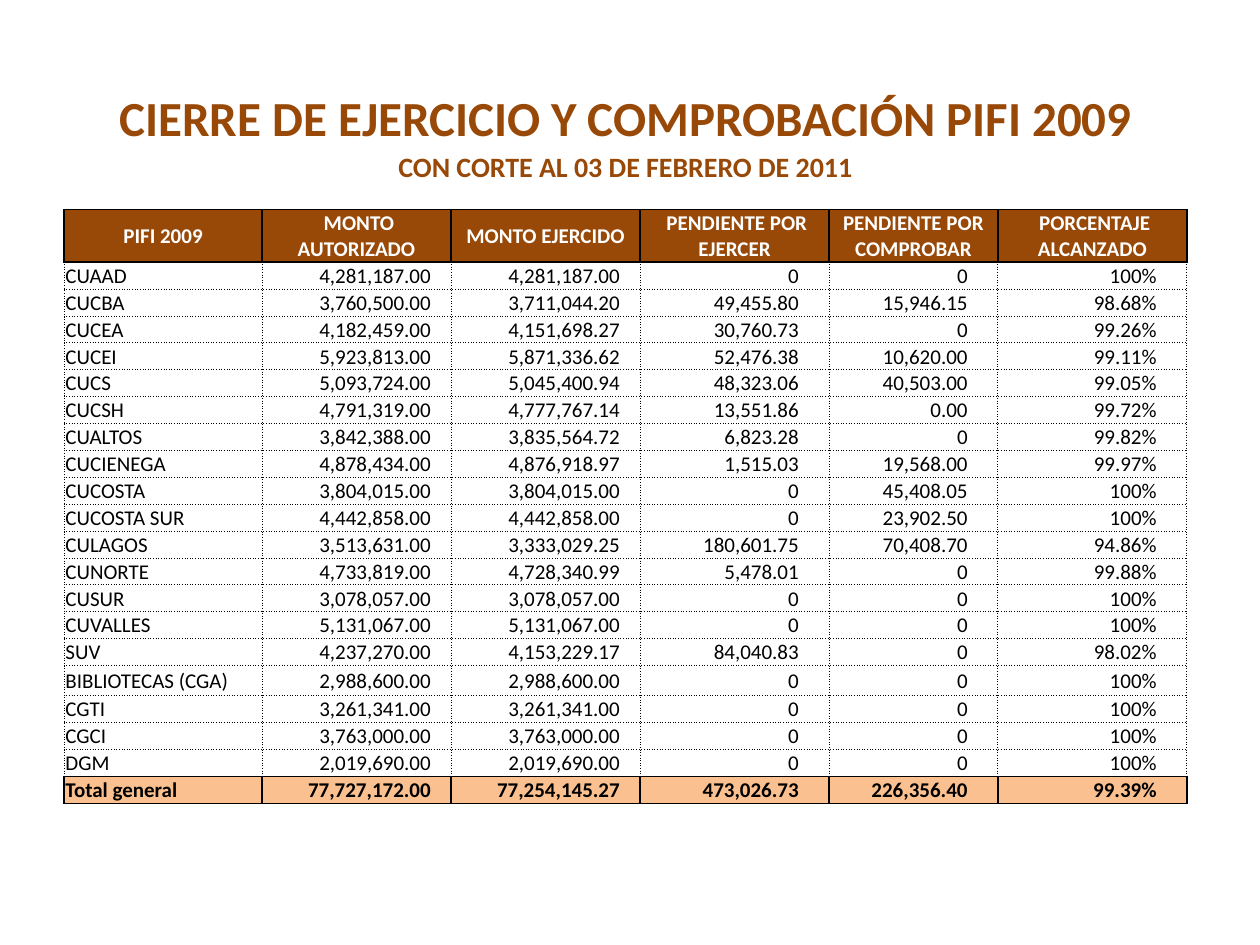
import pptx
import pptx.util
import pptx.dml.color
import pptx.enum.text
import pptx.oxml.ns
from lxml import etree

Inches = pptx.util.Inches
RGB = pptx.dml.color.RGBColor
ALIGN = pptx.enum.text.PP_ALIGN
ANCHOR = pptx.enum.text.MSO_ANCHOR

BROWN = RGB(0x98, 0x48, 0x07)
PEACH = RGB(0xFA, 0xC0, 0x90)
BLACK = RGB(0, 0, 0)
WHITE = RGB(0xFF, 0xFF, 0xFF)

TITLES = [("CIERRE DE EJERCICIO Y COMPROBACIÓN PIFI 2009", 28),
          ("CON CORTE AL 03 DE FEBRERO DE 2011", 16)]
HEADS = ["PIFI 2009", " MONTO AUTORIZADO", "MONTO EJERCIDO",
         " PENDIENTE POR EJERCER", "PENDIENTE POR COMPROBAR",
         " PORCENTAJE ALCANZADO"]
BODY = [
    ["CUAAD", "4,281,187.00", "4,281,187.00", "0", "0", "100%"],
    ["CUCBA", "3,760,500.00", "3,711,044.20", "49,455.80", "15,946.15", "98.68%"],
    ["CUCEA", "4,182,459.00", "4,151,698.27", "30,760.73", "0", "99.26%"],
    ["CUCEI", "5,923,813.00", "5,871,336.62", "52,476.38", "10,620.00", "99.11%"],
    ["CUCS", "5,093,724.00", "5,045,400.94", "48,323.06", "40,503.00", "99.05%"],
    ["CUCSH", "4,791,319.00", "4,777,767.14", "13,551.86", "0.00", "99.72%"],
    ["CUALTOS", "3,842,388.00", "3,835,564.72", "6,823.28", "0", "99.82%"],
    ["CUCIENEGA", "4,878,434.00", "4,876,918.97", "1,515.03", "19,568.00", "99.97%"],
    ["CUCOSTA", "3,804,015.00", "3,804,015.00", "0", "45,408.05", "100%"],
    ["CUCOSTA SUR", "4,442,858.00", "4,442,858.00", "0", "23,902.50", "100%"],
    ["CULAGOS", "3,513,631.00", "3,333,029.25", "180,601.75", "70,408.70", "94.86%"],
    ["CUNORTE", "4,733,819.00", "4,728,340.99", "5,478.01", "0", "99.88%"],
    ["CUSUR", "3,078,057.00", "3,078,057.00", "0", "0", "100%"],
    ["CUVALLES", "5,131,067.00", "5,131,067.00", "0", "0", "100%"],
    ["SUV", "4,237,270.00", "4,153,229.17", "84,040.83", "0", "98.02%"],
    ["BIBLIOTECAS (CGA)", "2,988,600.00", "2,988,600.00", "0", "0", "100%"],
    ["CGTI", "3,261,341.00", "3,261,341.00", "0", "0", "100%"],
    ["CGCI", "3,763,000.00", "3,763,000.00", "0", "0", "100%"],
    ["DGM", "2,019,690.00", "2,019,690.00", "0", "0", "100%"],
]
TOTAL = ["Total general", "77,727,172.00", "77,254,145.27",
         "473,026.73", "226,356.40", "99.39%"]
WIDTHS = [1.57, 1.5, 1.5, 1.5, 1.34, 1.5]
PADS = [0.01, 0.16, 0.16, 0.24, 0.24, 0.24]
SOLID = (1, "solid")
DOTS = (0.5, "sysDot")


def write(frame, text, size=12, color=BLACK, bold=False, align=ALIGN.LEFT,
          font="Calibri"):
    para = frame.paragraphs[0]
    para.alignment = align
    if not text:
        # An empty cell still takes its height from the end mark
        end = etree.SubElement(para._p, pptx.oxml.ns.qn("a:endParaRPr"))
        end.set("sz", str(size * 100))
        return
    run = para.add_run()
    run.text = text
    run.font.name = font
    run.font.size = pptx.util.Pt(size)
    run.font.bold = bold
    run.font.color.rgb = color


class Deck:
    def __init__(self):
        self.prs = pptx.Presentation()
        self.prs.slide_width = Inches(10)
        self.prs.slide_height = Inches(7.5)
        self.slide = self.prs.slides.add_slide(self.prs.slide_layouts[6])

    def table(self, left, top, widths, heights):
        shape = self.slide.shapes.add_table(
            len(heights), len(widths), Inches(left), Inches(top),
            Inches(sum(widths)), Inches(sum(heights)))
        grid = shape.table
        grid.first_row = grid.horz_banding = False
        for col, width in zip(grid.columns, widths):
            col.width = Inches(width)
        for row, height in zip(grid.rows, heights):
            row.height = Inches(height)
        return grid

    def cell(self, cell, text, pads=(0.01, 0.01), anchor=ANCHOR.MIDDLE,
             fill=None, edges=None, **style):
        cell.margin_left, cell.margin_right = map(Inches, pads)
        cell.margin_top, cell.margin_bottom = Inches(0.01), 0
        cell.vertical_anchor = anchor
        self.border(cell, edges or {})
        if fill is None:
            cell.fill.background()
        else:
            cell.fill.solid()
            cell.fill.fore_color.rgb = fill
        write(cell.text_frame, text, **style)

    def border(self, cell, edges):
        qn = pptx.oxml.ns.qn
        props = cell._tc.get_or_add_tcPr()
        for side in "LRTB":
            if side not in edges:
                continue
            width, dash = edges[side]
            line = etree.SubElement(props, qn("a:ln" + side),
                                    w=str(int(pptx.util.Pt(width))))
            paint = etree.SubElement(line, qn("a:solidFill"))
            etree.SubElement(paint, qn("a:srgbClr"), val=str(BLACK))
            etree.SubElement(line, qn("a:prstDash"), val=dash)

    def record(self, grid, row, texts, **look):
        for col, text in enumerate(texts):
            self.cell(grid.cell(row, col), text,
                      pads=(0 if col else 0.01, PADS[col]),
                      align=ALIGN.RIGHT if col else ALIGN.LEFT, **look)


def main():
    deck = Deck()
    heights = [0.51, 0.28, 0.19, 0.42]
    heights += [0.24 if "CGA" in rec[0] else 0.21 for rec in BODY] + [0.21]
    grid = deck.table(0.51, 0.68, WIDTHS, heights)
    last = len(WIDTHS) - 1

    # Title rows across the full width
    for row, (text, size) in enumerate(TITLES):
        for col in range(last + 1):
            deck.cell(grid.cell(row, col), "" if col else text,
                      anchor=ANCHOR.BOTTOM, size=10 if col else size,
                      color=BROWN, bold=True, align=ALIGN.CENTER)
        grid.cell(row, 0).merge(grid.cell(row, last))

    # Spacer row and column heads
    box = dict.fromkeys("LRTB", SOLID)
    for col, text in enumerate(HEADS):
        deck.cell(grid.cell(2, col), "", size=10, edges={"B": SOLID})
        deck.cell(grid.cell(3, col), text, fill=BROWN, edges=box,
                  color=WHITE, bold=True, align=ALIGN.CENTER)

    # One row per campus, dotted inside and solid at both ends
    for num, rec in enumerate(BODY):
        edges = dict.fromkeys("LRTB", DOTS)
        if num == 0:
            edges["T"] = SOLID
        if num == len(BODY) - 1:
            edges["B"] = SOLID
        deck.record(grid, num + 4, rec, edges=edges)

    # Total
    deck.record(grid, len(heights) - 1, TOTAL, fill=PEACH, edges=box,
                bold=True)
    deck.prs.save("out.pptx")


if __name__ == "__main__":
    main()
